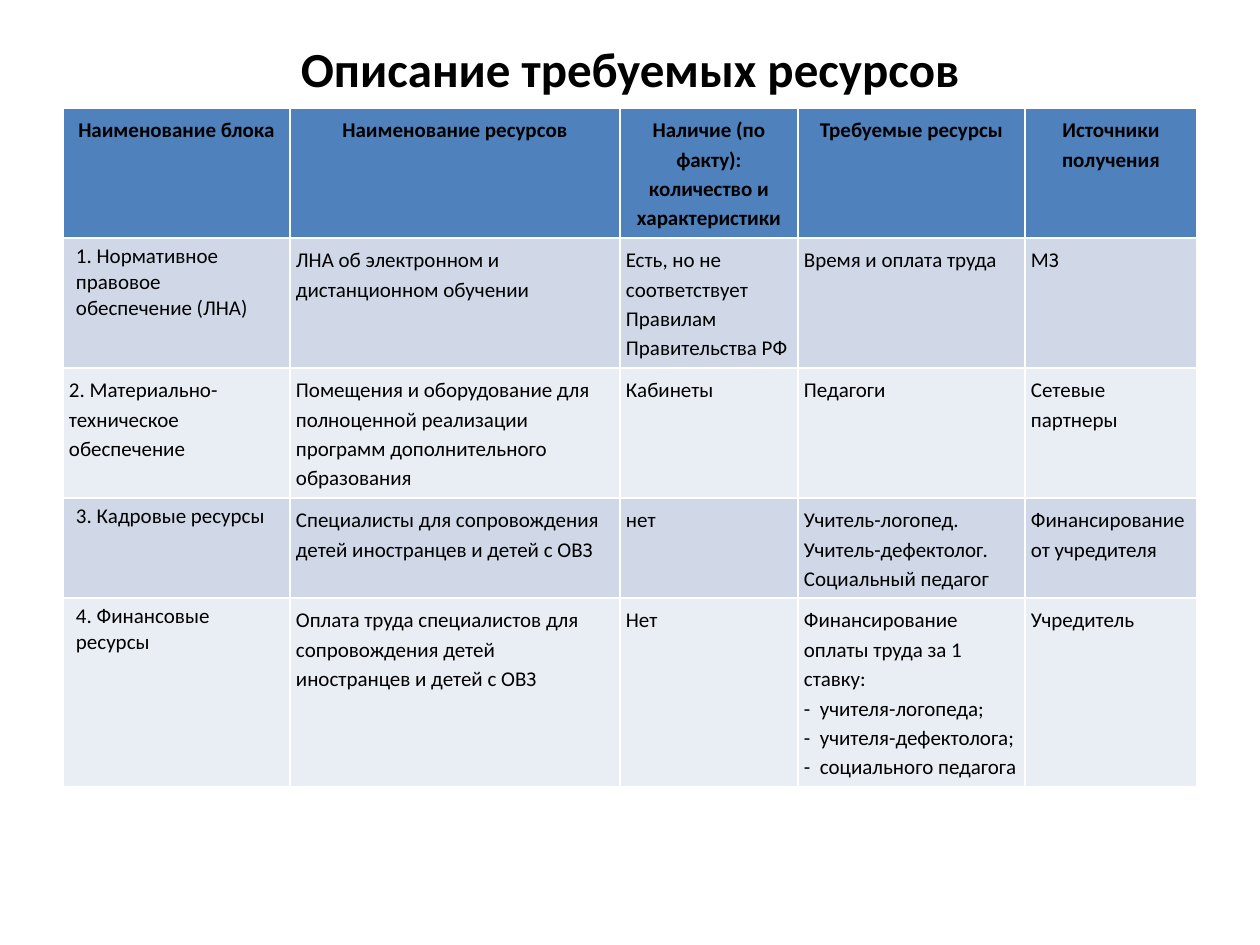
from pptx import Presentation
from pptx import util as u
from pptx.dml.color import RGBColor
from pptx.enum import text

# Content
TITLE = "Описание требуемых ресурсов"
HEADER = [
    "Наименование блока",
    "Наименование ресурсов",
    "Наличие (по факту): количество и характеристики",
    "Требуемые ресурсы",
    "Источники получения",
]
RESOURCES = [
    ["1. Нормативное правовое обеспечение (ЛНА)",
     "ЛНА об электронном и дистанционном обучении",
     "Есть, но не соответствует Правилам Правительства РФ",
     "Время и оплата труда",
     "МЗ"],
    ["2. Материально-техническое обеспечение",
     "Помещения и оборудование для полноценной реализации программ "
     "дополнительного образования",
     "Кабинеты",
     "Педагоги",
     "Сетевые партнеры"],
    ["3. Кадровые ресурсы",
     "Специалисты для сопровождения детей иностранцев и детей с ОВЗ",
     "нет",
     "Учитель-логопед.\nУчитель-дефектолог.\nСоциальный педагог",
     "Финансирование от учредителя"],
    ["4. Финансовые ресурсы",
     "Оплата труда специалистов для сопровождения детей иностранцев "
     "и детей с ОВЗ",
     "Нет",
     "Финансирование оплаты труда за 1 ставку:\n-  учителя-логопеда;\n"
     "-  учителя-дефектолога;\n-  социального педагога",
     "Учредитель"],
]

# Layout in px, 126 px to the inch
COLUMN_WIDTHS = [227, 330, 178, 227, 172]
ROW_HEIGHTS = [130, 130, 130, 100, 188]
LEFT, TITLE_TOP, TITLE_HEIGHT, TABLE_TOP = 63, 38, 60, 108
WIDTH = sum(COLUMN_WIDTHS)
INSET = 6
WIDE_ROWS = (1, 3, 4)  # block names with a wider side inset and single spacing

HEADER_FILL = "4F81BD"
BAND_FILLS = ["D0D8E8", "E9EDF4"]


def px(length):
    return u.Emu(round(length * 914400 / 126))


def color(value):
    return RGBColor.from_string(value)


def write(frame, content, size=12, bold=False, align=None, spacing=None):
    paragraph = frame.paragraphs[0]
    paragraph.text = content
    paragraph.alignment = align
    paragraph.line_spacing = spacing
    for run in paragraph.runs:
        run.font.name = "Calibri"
        run.font.size = u.Pt(size)
        run.font.bold = bold
        run.font.color.rgb = color("000000")


def main():
    presentation = Presentation()
    presentation.slide_width = px(1260)
    presentation.slide_height = px(945)
    slide = presentation.slides.add_slide(presentation.slide_layouts[5])
    center = text.PP_ALIGN.CENTER

    # Title
    title = slide.shapes.title
    title.left, title.top = px(LEFT), px(TITLE_TOP)
    title.width, title.height = px(WIDTH), px(TITLE_HEIGHT)
    title.text_frame.vertical_anchor = text.MSO_ANCHOR.MIDDLE
    write(title.text_frame, TITLE, size=28, bold=True, align=center)

    # Table: the default style draws the white borders
    rows = [HEADER] + RESOURCES
    table = slide.shapes.add_table(
        len(rows), len(HEADER), px(LEFT), px(TABLE_TOP),
        px(WIDTH), px(sum(ROW_HEIGHTS))).table
    for column, width in zip(table.columns, COLUMN_WIDTHS):
        column.width = px(width)
    for row, height in zip(table.rows, ROW_HEIGHTS):
        row.height = px(height)

    # Cells
    for i, row in enumerate(rows):
        header = i == 0
        for j, content in enumerate(row):
            cell = table.cell(i, j)
            wide = j == 0 and i in WIDE_ROWS
            cell.margin_left = cell.margin_right = px(13 if wide else INSET)
            cell.margin_top = cell.margin_bottom = px(INSET)
            cell.fill.solid()
            cell.fill.fore_color.rgb = color(
                HEADER_FILL if header else BAND_FILLS[(i - 1) % 2])
            write(cell.text_frame, content, bold=header,
                  align=center if header else None,
                  spacing=None if wide else 1.15)

    presentation.save("out.pptx")


if __name__ == "__main__":
    main()
